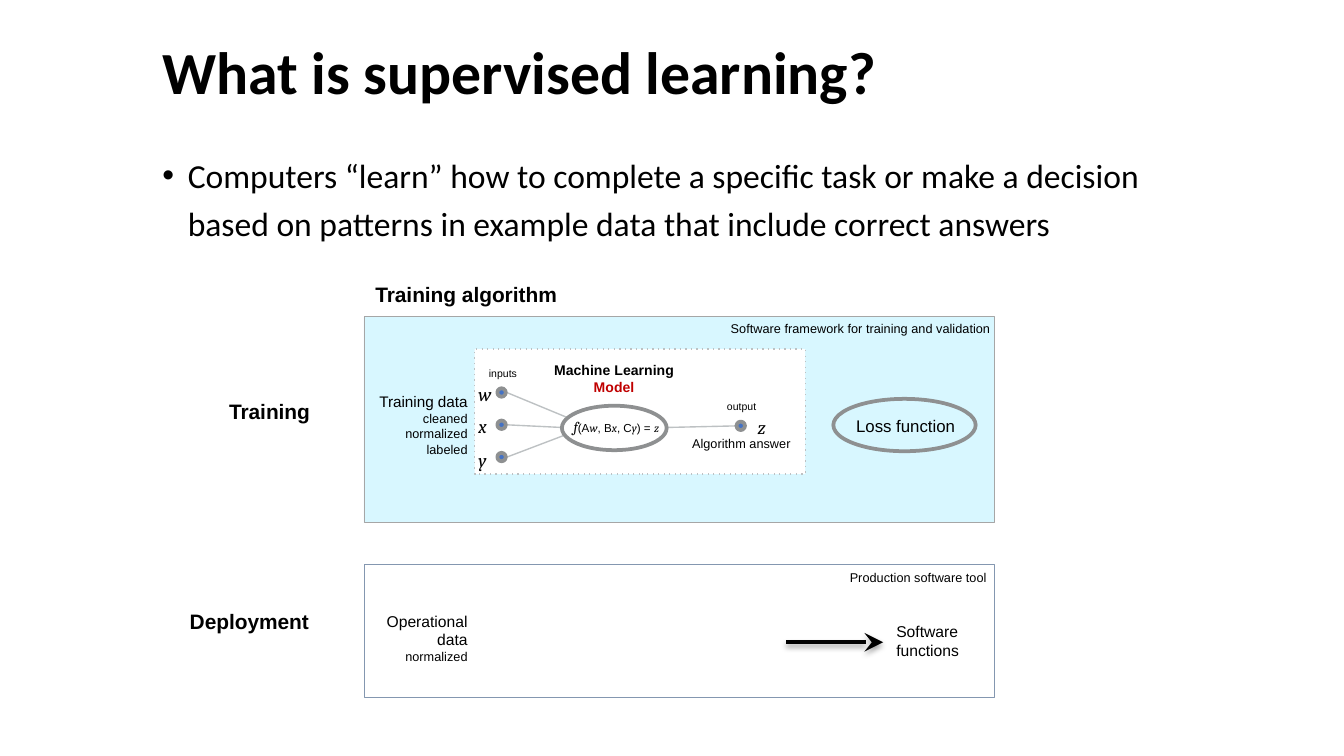
from dataclasses import dataclass

from lxml import etree
from pptx import Presentation
from pptx import util as u
from pptx.dml.color import RGBColor
from pptx.enum import shapes, text
from pptx.oxml import parse_xml
from pptx.oxml.ns import nsdecls, qn

Cm, Pt = u.Cm, u.Pt
LEFT, CENTER, RIGHT = text.PP_ALIGN.LEFT, text.PP_ALIGN.CENTER, text.PP_ALIGN.RIGHT


@dataclass(frozen=True)
class Theme:
    ink: str = "000000"
    accent: str = "C00000"
    white: str = "FFFFFF"
    training: str = "BFF3FF"
    training_edge: str = "A6A6A6"
    deployment_edge: str = "8497B0"
    grey: str = "8E9091"
    pale: str = "BDC1C3"
    node: str = "4472C4"
    title: float = 32
    body: float = 18
    heading: float = 11.2
    variable: float = 10.1
    loss: float = 9
    label: float = 8.4
    data: float = 8.2
    function: float = 7.9
    model: float = 7.5
    note: float = 6.8
    formula: float = 6.2
    tiny: float = 5.6
    head_font: str = "Calibri"
    sans: str = "Arial"
    math: str = "Cambria"


T = Theme()
NOTE_INSETS = (0.15, 0.08)
HEADING = dict(size=T.heading, bold=True, insets=(0.18, 0.1))
VARIABLE = dict(size=T.variable, font=T.math, italic=True, insets=(0.25, 0.13),
                wrap=False, grow=True)


def place(sp, box):
    sp.left, sp.top, sp.width, sp.height = (Cm(v) for v in box)


def set_font(font, size=T.note, font_name=T.sans, color=T.ink, bold=False, italic=False):
    font.size, font.name, font.bold, font.italic = Pt(size), font_name, bold, italic
    font.color.rgb = RGBColor.from_string(color)


def write(sp, paragraphs, size=T.note, font=T.sans, color=T.ink, bold=False, italic=False,
          align=LEFT, insets=NOTE_INSETS, wrap=True, grow=False, spacing=None):
    """Fill a shape; each paragraph is a list of (text, format overrides) runs."""
    tf = sp.text_frame
    tf.word_wrap, tf.vertical_anchor = wrap, text.MSO_ANCHOR.TOP
    tf.auto_size = text.MSO_AUTO_SIZE.SHAPE_TO_FIT_TEXT if grow else text.MSO_AUTO_SIZE.NONE
    tf.margin_left = tf.margin_right = Cm(insets[0])
    tf.margin_top = tf.margin_bottom = Cm(insets[1])
    base = dict(size=size, font_name=font, color=color, bold=bold, italic=italic)
    for i, runs in enumerate(paragraphs):
        p = tf.add_paragraph() if i else tf.paragraphs[0]
        p.alignment = align
        if spacing:
            p.line_spacing = spacing
        for words, changes in runs:
            r = p.add_run()
            r.text = words
            set_font(r.font, **{**base, **changes})


def add_text(s, box, *lines, **fmt):
    """Add a text box; a line is a string or a list of runs."""
    sp = s.shapes.add_textbox(*(Cm(v) for v in box))
    write(sp, [[(line, {})] if isinstance(line, str) else line for line in lines], **fmt)
    return sp


def add_shape(s, kind, box, line, width, fill=None, alpha=None, dash=None):
    sp = s.shapes.add_shape(kind, *(Cm(v) for v in box))
    sp.shadow.inherit = False
    if fill:
        sp.fill.solid()
        sp.fill.fore_color.rgb = RGBColor.from_string(fill)
    else:
        sp.fill.background()
    if alpha:
        color = sp.fill._xPr.find(f"{qn('a:solidFill')}/{qn('a:srgbClr')}")
        etree.SubElement(color, qn("a:alpha"), val=str(alpha * 1000))
    sp.line.color.rgb = RGBColor.from_string(line)
    sp.line.width = Pt(width)
    if dash:
        etree.SubElement(sp.line._get_or_add_ln(), qn("a:prstDash"), val=dash)
    return sp


def add_line(s, start, end, color=T.pale, width=0.75, arrow=False):
    """Draw a plain line, or an arrow with a soft shadow below it."""
    c = s.shapes.add_connector(shapes.MSO_CONNECTOR.STRAIGHT, *(Cm(v) for v in start + end))
    c.line.color.rgb = RGBColor.from_string(color)
    c.line.width = Pt(width)
    shadow = ""
    if arrow:
        etree.SubElement(c.line._get_or_add_ln(), qn("a:tailEnd"), type="stealth",
                         w="lg", len="lg")
        shadow = (f'<a:outerShdw blurRad="{Pt(3.1)}" dist="{Pt(1.6)}" dir="5400000" '
                  f'rotWithShape="0"><a:srgbClr val="{T.ink}"><a:alpha val="38000"/>'
                  '</a:srgbClr></a:outerShdw>')
    effects = f'<a:effectLst {nsdecls("a")}>{shadow}</a:effectLst>'
    c._element.spPr.append(parse_xml(effects))


def add_node(s, x, y, size=0.16):
    add_shape(s, shapes.MSO_SHAPE.FLOWCHART_CONNECTOR,
              (x - size / 2, y - size / 2, size, size), T.grey, 2, T.node)


def add_bullet(p, indent):
    pPr = p._p.get_or_add_pPr()
    pPr.set("marL", str(Cm(indent)))
    pPr.set("indent", str(-Cm(indent)))
    color = etree.SubElement(pPr, qn("a:buClr"))
    etree.SubElement(color, qn("a:srgbClr"), val=T.ink)
    etree.SubElement(pPr, qn("a:buFont"), typeface=T.sans)
    etree.SubElement(pPr, qn("a:buChar"), char="•")


def add_heading(s):
    place(s.shapes.title, (3.07, 0.81, 21.56, 1.37))
    write(s.shapes.title, [[("What is supervised learning?", {})]], size=T.title,
          font=T.head_font, bold=True, insets=(0, 0), spacing=0.9)
    body = add_text(s, (3.07, 2.77, 19.63, 2.01),
                    "Computers “learn” how to complete a specific task or make a decision "
                    "based on patterns in example data that include correct answers",
                    size=T.body, font=T.head_font, insets=(0, 0), spacing=1.2)
    add_bullet(body.text_frame.paragraphs[0], 0.48)


def add_training(s):
    add_text(s, (3.86, 7.44, 2.18, 0.69), "Training", align=RIGHT, **HEADING)
    add_text(s, (6.88, 5.23, 3.86, 0.69), "Training algorithm", align=CENTER, wrap=False,
             **HEADING)
    add_shape(s, shapes.MSO_SHAPE.RECTANGLE, (6.88, 5.99, 11.91, 3.89), T.training_edge, 0.5,
              T.training, alpha=60)
    add_text(s, (6.96, 7.34, 2.03, 1.37), [("Training data", {"size": T.data})],
             "cleaned", "normalized", "labeled", align=RIGHT)
    add_text(s, (15.82, 7.77, 2.59, 0.53), "Loss function", size=T.loss, align=CENTER)
    add_shape(s, shapes.MSO_SHAPE.OVAL, (15.75, 7.54, 2.69, 0.99), T.grey, 2)
    add_text(s, (13.49, 5.99, 5.38, 0.38), "Software framework for training and validation",
             align=RIGHT)


def add_model(s):
    add_shape(s, shapes.MSO_SHAPE.RECTANGLE, (8.97, 6.6, 6.25, 2.36), T.pale, 0.75, T.white,
              dash="dot")
    inputs = (("w", 7.42, 7.11, (10.74, 7.9)),
              ("x", 8.03, 7.7, (10.62, 8.08)),
              ("y", 8.64, 8.36, (10.74, 8.2)))
    for name, y, label_top, end in inputs:
        add_line(s, (9.58, y), end)
        add_node(s, 9.48, y)
        add_text(s, (8.79, label_top, 0.7, 0.69), name, **VARIABLE)
    add_line(s, (12.6, 8.08), (13.92, 8.05))
    add_node(s, 14, 8.05)
    add_text(s, (14.07, 7.72, 0.66, 0.69), "z", **VARIABLE)
    add_text(s, (12.93, 8.15, 2.16, 0.41), "Algorithm answer", wrap=False)
    add_text(s, (9.09, 6.86, 0.81, 0.38), "inputs", size=T.tiny, wrap=False)
    add_text(s, (13.59, 7.49, 0.94, 0.38), "output", size=T.tiny, wrap=False)
    add_text(s, (10.08, 6.76, 3.05, 0.86), "Machine Learning", [("Model", {"color": T.accent})],
             size=T.model, bold=True, align=CENTER)
    add_shape(s, shapes.MSO_SHAPE.OVAL, (10.62, 7.67, 1.98, 0.84), T.grey, 2, T.white)
    symbol = {"font_name": T.math, "italic": True}
    formula = [(part, symbol if part in "wxyz" else {})
               for part in ("(A", "w", ", B", "x", ", C", "y", ") = ", "z")]
    add_text(s, (10.35, 7.77, 2.6, 0.58), [("f", {**symbol, "size": T.function})] + formula,
             size=T.formula, align=CENTER, insets=(0.25, 0.13), wrap=False, grow=True)


def add_deployment(s):
    add_text(s, (3.35, 11.4, 2.67, 0.69), "Deployment", align=RIGHT, **HEADING)
    add_shape(s, shapes.MSO_SHAPE.RECTANGLE, (6.88, 10.67, 11.91, 2.51), T.deployment_edge, 0.5)
    add_text(s, (6.45, 11.48, 2.54, 1.14), "Operational", "data",
             [("normalized", {"size": T.note})], size=T.label, align=RIGHT)
    add_text(s, (16.79, 11.68, 1.52, 0.89), "Software functions", size=T.label)
    add_line(s, (14.86, 12.14), (16.69, 12.14), T.ink, 2, arrow=True)
    add_text(s, (15.8, 10.69, 3, 0.38), "Production software tool", align=RIGHT)


def main():
    prs = Presentation()
    prs.slide_width, prs.slide_height = Cm(25.4), Cm(14.29)
    s = prs.slides.add_slide(prs.slide_layouts[5])
    add_heading(s)
    add_training(s)
    add_model(s)
    add_deployment(s)
    prs.save("out.pptx")


if __name__ == "__main__":
    main()
